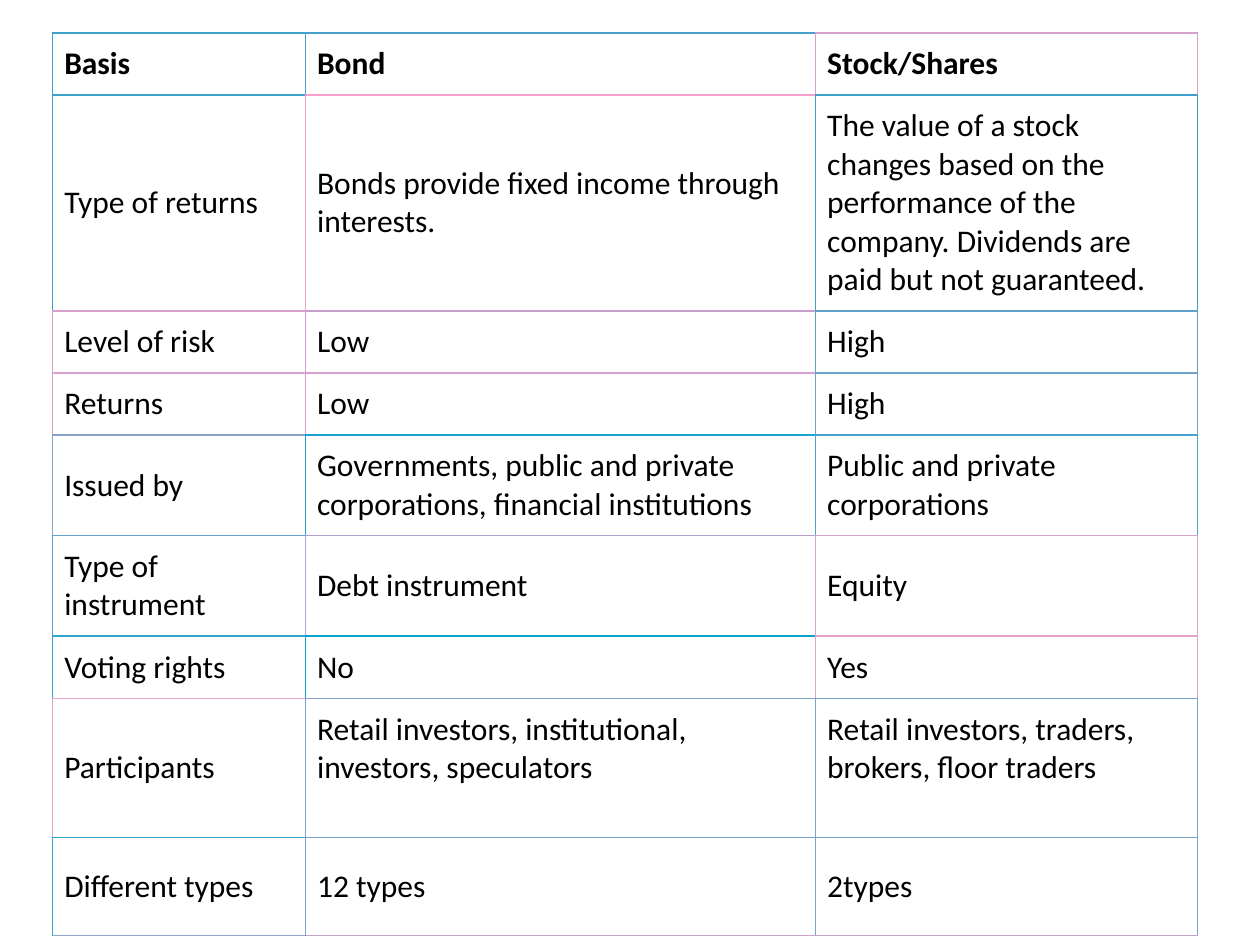
"""Build a slide with a table that compares bonds with stocks."""
from lxml.etree import SubElement
from pptx import Presentation
from pptx.dml.color import RGBColor as RGB
from pptx.enum.text import MSO_ANCHOR as ANCHOR
from pptx.oxml.ns import qn
from pptx.util import Pt

BLACK = RGB(0x00, 0x00, 0x00)
WHITE = RGB(0xFF, 0xFF, 0xFF)

COL_WIDTHS = [144.5, 291.5, 218.2]
ROWS = [
    (35.5, ["Basis", "Bond", "Stock/Shares"]),
    (123.3, ["Type of returns", "Bonds provide fixed income through interests.",
             "The value of a stock changes based on the performance of the company. "
             "Dividends are paid but not guaranteed."]),
    (35.5, ["Level of risk", "Low", "High"]),
    (35.5, ["Returns", "Low", "High"]),
    (57.4, ["Issued by",
            "Governments, public and private corporations, financial institutions",
            "Public and private corporations"]),
    (57.4, ["Type of instrument", "Debt instrument", "Equity"]),
    (35.5, ["Voting rights", "No", "Yes"]),
    (79.4, ["Participants", "Retail investors, institutional, investors, speculators",
            "Retail investors, traders, brokers, floor traders"]),
    (56.2, ["Different types", "12 types", "2types"]),
]
EDGE_COLORS = [[RGB.from_string(c) for c in row.split()] for row in (
    "40A0CC 48A1CC D8A1CC",
    "40A0CC F89FCC 40A0CC",
    "D8A1CC C89FCC 60A1CC",
    "D8A1CC D8A1CC 70A3CC",
    "88A3CC 18A4CC 48A4CC",
    "60A4CC B0A2CC D8A4CC",
    "30A4CC 08A2CC E8A3CC",
    "E8A3CC 80A2CC 78A4CC",
    "30A4CC 78A4CC 78A4CC",
    "90A4CC C8A2CC C0A4CC",
)]


def set_text(cell, text, size=18, bold=False, color=BLACK, font="Calibri",
             anchor=ANCHOR.MIDDLE, inset=6.75):
    cell.margin_left = cell.margin_right = Pt(inset)
    cell.margin_top = cell.margin_bottom = Pt(inset)
    cell.vertical_anchor = anchor
    r = cell.text_frame.paragraphs[0].add_run()
    r.text = text
    r.font.size = Pt(size)
    r.font.bold = bold
    r.font.name = font
    r.font.color.rgb = color


def set_borders(cell, width=1, **colors):
    tc_pr = cell._tc.get_or_add_tcPr()
    for side, color in colors.items():
        ln = SubElement(tc_pr, qn(f"a:ln{side}"), w=str(Pt(width)))
        fill = SubElement(ln, qn("a:solidFill"))
        SubElement(fill, qn("a:srgbClr"), val=str(color))


prs = Presentation()
prs.slide_width, prs.slide_height = Pt(720), Pt(540)
s = prs.slides.add_slide(prs.slide_layouts[6])

heights = [height for height, texts in ROWS]
frame = s.shapes.add_table(len(ROWS), len(COL_WIDTHS), Pt(30), Pt(18.8),
                           Pt(sum(COL_WIDTHS)), Pt(sum(heights)))
table = frame.table
table.first_row = table.horz_banding = False
for column, width in zip(table.columns, COL_WIDTHS):
    column.width = Pt(width)

for i, (height, texts) in enumerate(ROWS):
    table.rows[i].height = Pt(height)
    for j, text in enumerate(texts):
        cell = table.cell(i, j)
        own = EDGE_COLORS[i][j]
        following = EDGE_COLORS[i][min(j + 1, len(texts) - 1)]
        set_borders(cell, L=own, R=following, T=own, B=EDGE_COLORS[i + 1][j])
        top = texts[0] == "Participants" and j > 0
        set_text(cell, text, bold=i == 0, anchor=ANCHOR.TOP if top else ANCHOR.MIDDLE)
        if i == 0:
            cell.fill.solid()
            cell.fill.fore_color.rgb = WHITE
        else:
            cell.fill.background()

prs.save("out.pptx")
